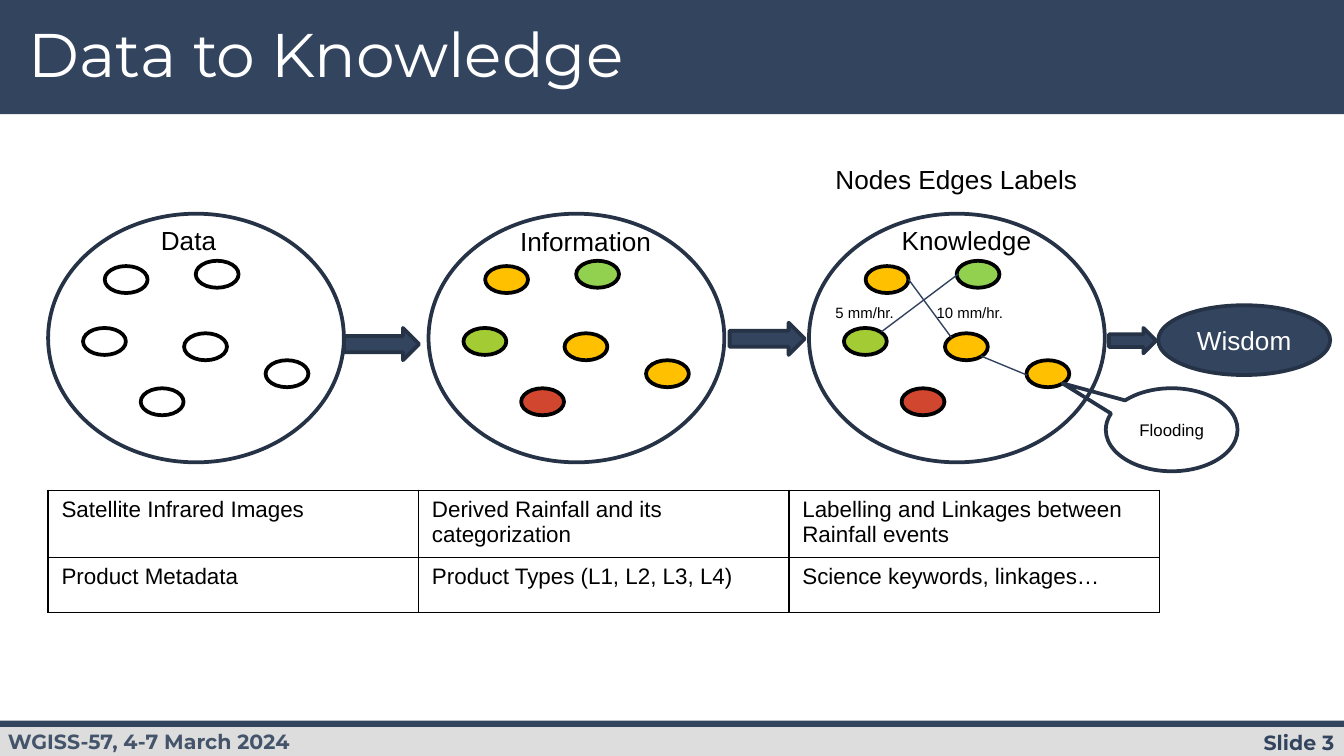
"""Build the Data to Knowledge slide."""
import pptx
import pptx.util
import pptx.dml.color
import pptx.enum.shapes
import pptx.enum.text
import pptx.oxml
import pptx.oxml.ns
from pptx.util import Cm

rgb = pptx.dml.color.RGBColor.from_string
SHAPE = pptx.enum.shapes.MSO_SHAPE
ALIGN = pptx.enum.text.PP_ALIGN
NAVY, OUTLINE, BLACK, WHITE = "33445F", "263246", "000000", "FFFFFF"

deck = pptx.Presentation()
deck.slide_width, deck.slide_height = Cm(25.4), Cm(14.29)
slide = deck.slides.add_slide(deck.slide_layouts[6])


def draw(kind, box, fill=None, line=None):
    """Add a preset shape with an optional fill and outline."""
    shape = slide.shapes.add_shape(kind, *map(Cm, box))
    shape.shadow.inherit = False
    if fill:
        shape.fill.solid()
        shape.fill.fore_color.rgb = rgb(fill)
    else:
        shape.fill.background()
    if line:
        shape.line.color.rgb = rgb(line)
        shape.line.width = pptx.util.Pt(2)
    else:
        shape.line.fill.background()
    return shape


def write(frame, text, size, color=BLACK, font="Arial", bold=False, align=ALIGN.LEFT):
    """Write one run into the first paragraph of a text frame."""
    frame.word_wrap = True
    paragraph = frame.paragraphs[0]
    paragraph.alignment = align
    run = paragraph.add_run()
    run.text = text
    run.font.name, run.font.size, run.font.bold = font, pptx.util.Pt(size), bold
    run.font.color.rgb = rgb(color)
    return paragraph


draw(SHAPE.RECTANGLE, (0, 0, 25.4, 2.16), NAVY)
draw(SHAPE.RECTANGLE, (0, 13.69, 25.4, 0.6), "DDDDDD")
draw(SHAPE.RECTANGLE, (0, 13.62, 25.4, 0.12), NAVY)

slide_number = slide.shapes.add_textbox(Cm(21.39), Cm(13.69), Cm(4.01), Cm(0.66)).text_frame
event = slide.shapes.add_textbox(Cm(-0.1), Cm(13.54), Cm(8.03), Cm(0.99)).text_frame
title = slide.shapes.add_textbox(Cm(0.36), Cm(0.36), Cm(19.56), Cm(1.63)).text_frame
for frame, side, edge in ((slide_number, 0.18, 0.1), (event, 0.25, 0.25), (title, 0.18, 0.1)):
    frame.margin_left = frame.margin_right = Cm(side)
    frame.margin_top = frame.margin_bottom = Cm(edge)
write(slide_number, "Slide 3", 11, NAVY, "Montserrat", True, ALIGN.RIGHT)
write(event, "WGISS-57, 4-7 March 2024", 11, "44546A", "Montserrat", True)
write(title, "Data to Knowledge", 33, WHITE, "Montserrat").line_spacing = 0.9

nodes = [
    (1.07, 0.99, "FFC000"), (0.66, 2.16, "A3CB34"), (2.79, 0.89, "92D050"),
    (4.11, 2.77, "FFC000"), (2.57, 2.26, "FFC000"), (1.75, 3.3, "D1462F"),
]
for stage in range(3):
    left, top = 0.91 + 7.19 * stage, 4.04
    draw(SHAPE.OVAL, (left, top, 5.59, 4.7), line=OUTLINE)
    for dx, dy, category in nodes:
        draw(SHAPE.OVAL, (left + dx, top + dy, 0.81, 0.51), category if stage else None, BLACK)

for edge in ((17.17, 5.28, 17.98, 6.38), (18.54, 6.73, 19.41, 7.09), (18.11, 5.18, 16.66, 6.27)):
    link = slide.shapes.add_connector(pptx.enum.shapes.MSO_CONNECTOR.STRAIGHT, *map(Cm, edge))
    link.line.color.rgb = rgb("31425E")
    link.line.width = pptx.util.Pt(0.75)
    link.element.spPr.append(pptx.oxml.parse_xml(f'<a:effectLst {pptx.oxml.ns.nsdecls("a")}/>'))

for label, left, top, width, height, size in (
    ("Data", 2.79, 4.11, 3.66, 0.86, 14),
    ("Information", 9.58, 4.14, 3.66, 0.86, 14),
    ("Knowledge", 16.79, 4.11, 3.66, 0.86, 14),
    ("Nodes Edges Labels", 15.54, 2.97, 5.08, 0.86, 14),
    ("10 mm/hr.", 17.45, 5.61, 3.07, 0.61, 8),
    ("5 mm/hr.", 15.54, 5.61, 1.7, 0.61, 8),
):
    write(slide.shapes.add_textbox(Cm(left), Cm(top), Cm(width), Cm(height)).text_frame, label, size)

examples = [
    ("Satellite Infrared Images", "Derived Rainfall and its categorization",
     "Labelling and Linkages between Rainfall events"),
    ("Product Metadata", "Product Types (L1, L2, L3, L4)", "Science keywords, linkages…"),
]
table = slide.shapes.add_table(2, 3, Cm(0.91), Cm(9.27), Cm(21), Cm(2.31)).table
table.first_row = table.horz_banding = False
for row, height, texts in zip(table.rows, (1.27, 1.04), examples):
    row.height = Cm(height)
    for cell, text in zip(row.cells, texts):
        write(cell.text_frame, text, 12)
        properties = cell._tc.get_or_add_tcPr()
        for side in "LRTB":
            properties.append(pptx.oxml.parse_xml(
                f'<a:ln{side} {pptx.oxml.ns.nsdecls("a")} w="12700"><a:solidFill>'
                f'<a:srgbClr val="{BLACK}"/></a:solidFill></a:ln{side}>'))
        cell.fill.background()

for arrow in ((6.5, 6.2, 1.42, 0.61), (13.79, 6.1, 1.42, 0.61), (20.96, 6.2, 0.89, 0.48)):
    draw(SHAPE.RIGHT_ARROW, arrow, NAVY, OUTLINE)

flooding = draw(SHAPE.OVAL_CALLOUT, (20.9, 7.34, 2.49, 1.57), line=OUTLINE)
flooding.adjustments[0], flooding.adjustments[1] = -0.83, -0.56
wisdom = draw(SHAPE.OVAL, (21.89, 5.77, 3.25, 1.32), NAVY, OUTLINE)
for shape, text, size, color in ((flooding, "Flooding", 9, BLACK), (wisdom, "Wisdom", 14, WHITE)):
    shape.text_frame.vertical_anchor = pptx.enum.text.MSO_ANCHOR.MIDDLE
    write(shape.text_frame, text, size, color, align=ALIGN.CENTER)

deck.save("out.pptx")
